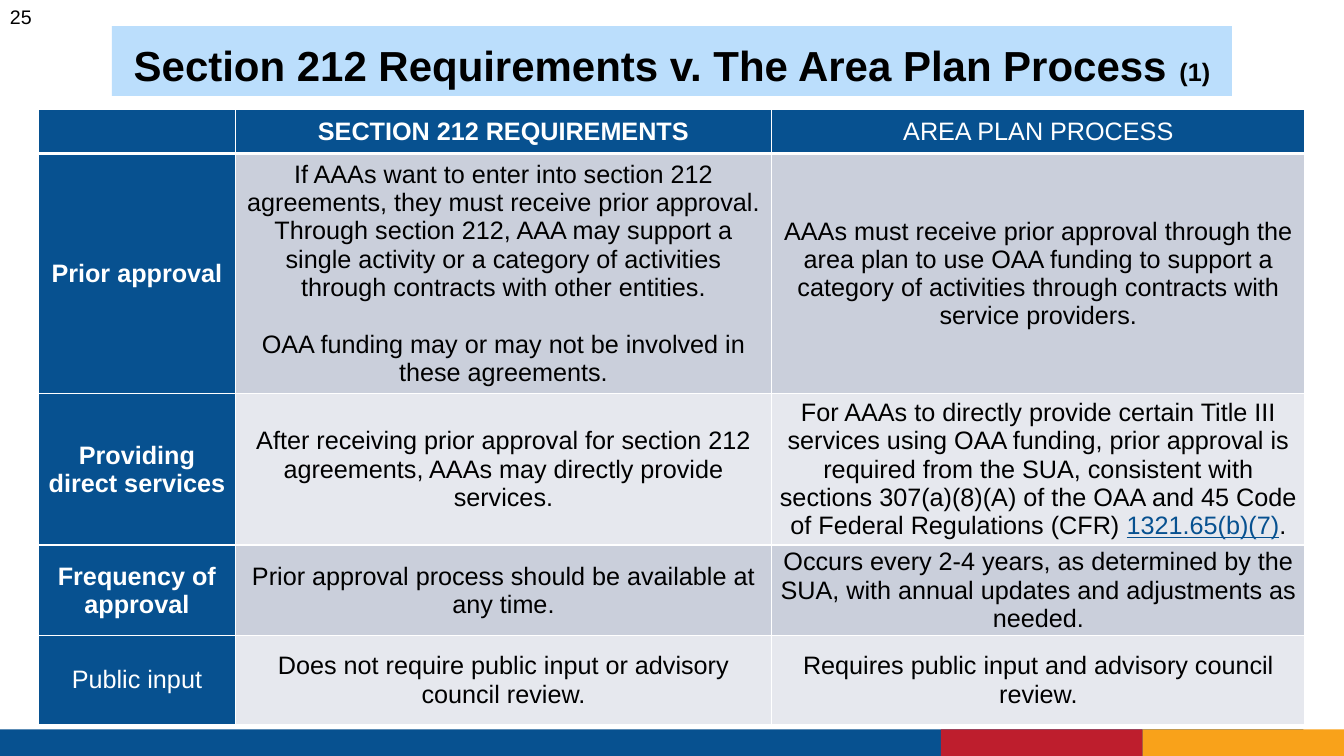
from dataclasses import dataclass
from typing import Optional

from lxml import etree
from pptx import Presentation
from pptx.dml.color import RGBColor
from pptx.enum.shapes import MSO_SHAPE
from pptx.enum.text import MSO_ANCHOR, MSO_AUTO_SIZE, PP_ALIGN
from pptx.oxml.ns import qn
from pptx.util import Pt

RECTANGLE = MSO_SHAPE.RECTANGLE
CENTER = PP_ALIGN.CENTER
MIDDLE = MSO_ANCHOR.MIDDLE
BOTTOM = MSO_ANCHOR.BOTTOM
NO_AUTOFIT = MSO_AUTO_SIZE.NONE


@dataclass(frozen=True)
class Theme:
    font: str = "Arial"
    blue: str = "075190"
    red: str = "BE1E2D"
    orange: str = "F9A21A"
    title_fill: str = "BBDEFC"
    bands: tuple = ("CACFDB", "E6E8EE")
    black: str = "000000"
    white: str = "FFFFFF"
    title_size: float = 30
    body_size: float = 18
    number_size: float = 14


THEME = Theme()


@dataclass(frozen=True)
class Bar:
    left: float
    width: float
    color: str


@dataclass(frozen=True)
class Span:
    text: str
    color: str = THEME.black
    bold: bool = False
    underline: bool = False
    size: float = THEME.body_size


@dataclass(frozen=True)
class Row:
    height: float
    side_inset: float
    heading: Optional[Span]
    section_212: list
    area_plan: list


def header(text: str, bold: bool = True) -> Span:
    return Span(text, THEME.white, bold)


BAR_TOP, BAR_HEIGHT = 521, 19
BARS = [
    Bar(0, 931, THEME.blue),
    Bar(816, 144, THEME.orange),
    Bar(672, 144, THEME.red),
]
TABLE_LEFT, TABLE_TOP = 27.6, 77.9
COLUMN_WIDTHS = [140.4, 383.2, 381]
PARAGRAPH_GAP = 20.5
ROWS = [
    Row(31.7, 4.5, None,
        [[header("SECTION 212 REQUIREMENTS")]],
        [[header("AREA PLAN PROCESS", False)]]),
    Row(169.9, 4.5, header("Prior approval"),
        [[Span("If AAAs want to enter into section 212 agreements, they must receive "
               "prior approval. Through section 212, AAA may support a single activity "
               "or a category of activities through contracts with other entities.")],
         [Span("OAA funding may or may not be involved in these agreements.")]],
        [[Span("AAAs must receive prior approval through the area plan to use OAA "
               "funding to support a category of activities through contracts with "
               "service providers.")]]),
    Row(106.6, 4.5, header("Providing direct services"),
        [[Span("After receiving prior approval for section 212 agreements, AAAs may "
               "directly provide services.")]],
        [[Span("For AAAs to directly provide certain Title III services using OAA "
               "funding, prior approval is required from the SUA, consistent with "
               "sections 307(a)(8)(A) of the OAA and 45 Code of Federal Regulations "
               "(CFR) "),
          Span("1321.65(b)(7)", THEME.blue, underline=True),
          Span(".")]]),
    Row(63.7, 1.4, header("Frequency of approval"),
        [[Span("Prior approval process should be available at any time.")]],
        [[Span("Occurs every 2-4 years, as determined by the SUA, with annual updates "
               "and adjustments as needed.")]]),
    Row(63.4, 1.4, header("Public input", False),
        [[Span("Does not require public input or advisory council review.")]],
        [[Span("Requires public input and advisory council review.")]]),
]


def add_spans(paragraph, spans: list) -> None:
    for span in spans:
        run = paragraph.add_run()
        run.text = span.text
        run.font.name = THEME.font
        run.font.size = Pt(span.size)
        run.font.bold = span.bold
        run.font.underline = span.underline
        run.font.color.rgb = RGBColor.from_string(span.color)


def set_fill(target, color: str) -> None:
    target.fill.solid()
    target.fill.fore_color.rgb = RGBColor.from_string(color)


def set_borders(cell, top: float, bottom: float) -> None:
    properties = cell._tc.get_or_add_tcPr()
    widths = {"a:lnL": 1, "a:lnR": 1, "a:lnT": top, "a:lnB": bottom}
    for position, (tag, width) in enumerate(widths.items()):
        line = etree.Element(qn(tag), w=str(Pt(width)))
        fill = etree.SubElement(line, qn("a:solidFill"))
        etree.SubElement(fill, qn("a:srgbClr"), val=THEME.white)
        properties.insert(position, line)


def add_bar(slide, bar: Bar) -> None:
    shape = slide.shapes.add_shape(
        RECTANGLE, Pt(bar.left), Pt(BAR_TOP), Pt(bar.width), Pt(BAR_HEIGHT))
    shape.shadow.inherit = False
    set_fill(shape, bar.color)
    shape.line.fill.background()


def add_page_number(slide) -> None:
    frame = slide.shapes.add_textbox(0, 0, Pt(36), Pt(24.5)).text_frame
    frame.word_wrap = True
    add_spans(frame.paragraphs[0], [Span("25", size=THEME.number_size)])


def format_title(slide) -> None:
    title = slide.shapes.title
    title.left, title.top, title.width, title.height = Pt(80), Pt(18.6), Pt(800), Pt(50)
    set_fill(title, THEME.title_fill)
    frame = title.text_frame
    frame.auto_size = NO_AUTOFIT
    frame.word_wrap = True
    frame.vertical_anchor = BOTTOM
    frame.margin_left = frame.margin_right = Pt(7.2)
    frame.margin_top = frame.margin_bottom = Pt(3.6)
    paragraph = frame.paragraphs[0]
    paragraph.alignment = CENTER
    paragraph.line_spacing = 0.9
    add_spans(paragraph, [
        Span("Section 212 Requirements v. The Area Plan Process ",
             bold=True, size=THEME.title_size),
        Span("(1)", bold=True),
    ])


def fill_cell(cell, paragraphs: list, side_inset: float) -> None:
    cell.vertical_anchor = MIDDLE
    cell.margin_left = cell.margin_right = Pt(side_inset)
    cell.margin_top = cell.margin_bottom = 0
    frame = cell.text_frame
    for index, spans in enumerate(paragraphs):
        paragraph = frame.add_paragraph() if index else frame.paragraphs[0]
        paragraph.alignment = CENTER
        if index:
            paragraph.space_before = Pt(PARAGRAPH_GAP)
        add_spans(paragraph, spans)


def add_comparison_table(slide) -> None:
    table = slide.shapes.add_table(
        len(ROWS), len(COLUMN_WIDTHS), Pt(TABLE_LEFT), Pt(TABLE_TOP),
        Pt(sum(COLUMN_WIDTHS)), Pt(sum(row.height for row in ROWS))).table
    table.horz_banding = False
    for column, width in zip(table.columns, COLUMN_WIDTHS):
        column.width = Pt(width)
    for row_index, row in enumerate(ROWS):
        table.rows[row_index].height = Pt(row.height)
        heading = [[row.heading]] if row.heading else []
        for column_index, content in enumerate([heading, row.section_212, row.area_plan]):
            cell = table.cell(row_index, column_index)
            fill_cell(cell, content, row.side_inset)
            is_header = row_index == 0 or column_index == 0
            set_fill(cell, THEME.blue if is_header else THEME.bands[(row_index - 1) % 2])
            set_borders(cell, 3 if row_index == 1 else 1, 3 if row_index == 0 else 1)


def main() -> None:
    presentation = Presentation()
    presentation.slide_width, presentation.slide_height = Pt(960), Pt(540)
    slide = presentation.slides.add_slide(presentation.slide_layouts[5])
    for bar in BARS:
        add_bar(slide, bar)
    add_page_number(slide)
    format_title(slide)
    add_comparison_table(slide)
    presentation.save("out.pptx")


if __name__ == "__main__":
    main()
